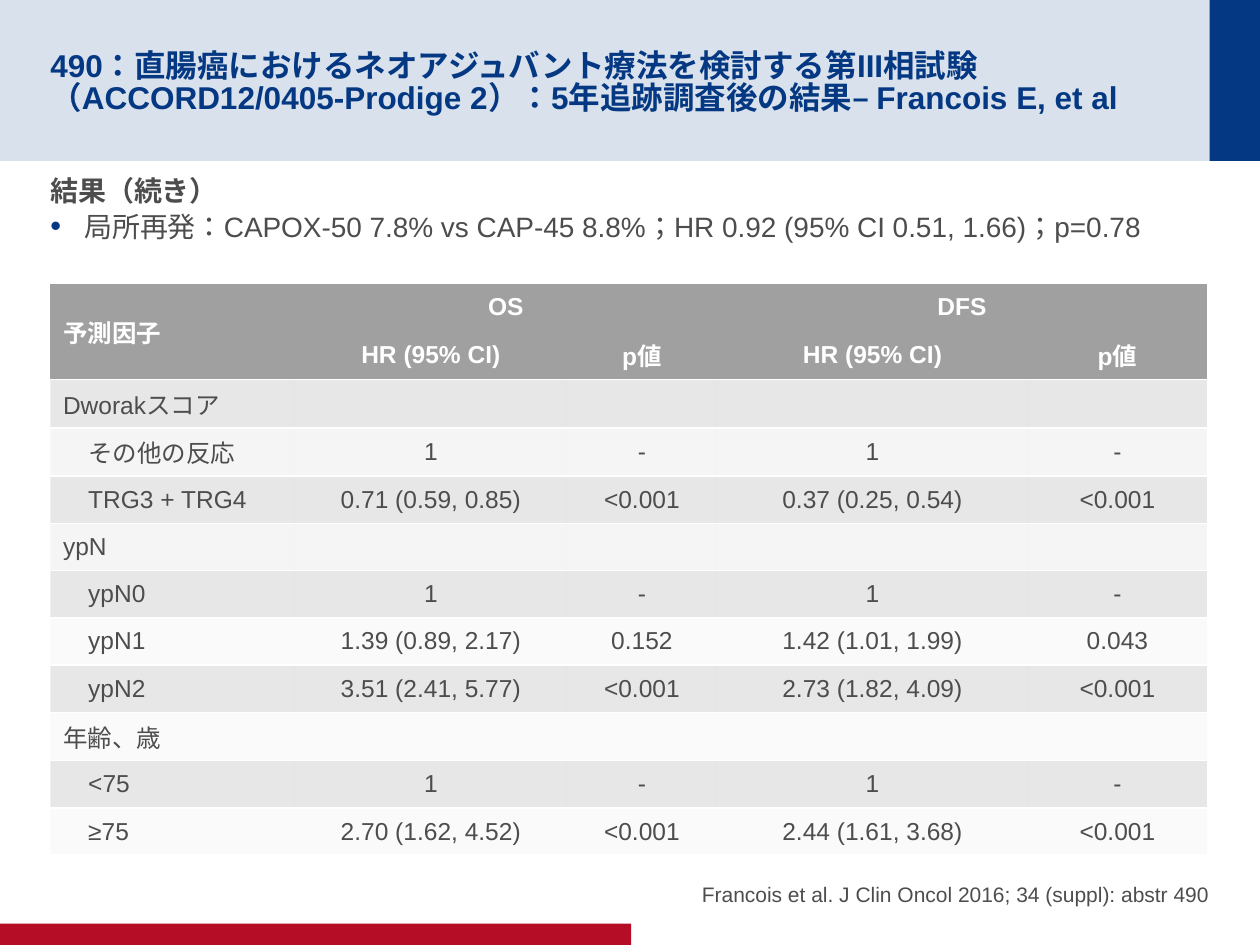
from lxml.etree import SubElement
from pptx import Presentation
from pptx.dml.color import RGBColor
from pptx.enum.lang import MSO_LANGUAGE_ID
from pptx.enum.shapes import MSO_SHAPE
from pptx.enum.text import MSO_ANCHOR, MSO_AUTO_SIZE, PP_ALIGN
from pptx.oxml.ns import qn
from pptx.util import Pt

NAVY = RGBColor(0x04, 0x38, 0x82)
RED = RGBColor(0xB6, 0x0D, 0x27)
INK = RGBColor(0x4D, 0x4D, 0x4D)
GREY = RGBColor(0xA0, 0xA0, 0xA0)
PALE = RGBColor(0xEC, 0xEC, 0xEC)
WHITE = RGBColor(0xFF, 0xFF, 0xFF)

NO_GRID_STYLE = "{2D5ABB26-0587-4C30-8999-92F81FD0307C}"

TITLE = ("490：直腸癌におけるネオアジュバント療法を検討する第III相試験"
         "（ACCORD12/0405-Prodige 2）：5年追跡調査後の結果– Francois E, et al")
HEADING = "結果（続き）"
RECURRENCE = ("局所再発：CAPOX-50 7.8% vs CAP-45 8.8%；"
              "HR 0.92 (95% CI 0.51, 1.66)；p=0.78")
CITATION = "Francois et al. J Clin Oncol 2016; 34 (suppl): abstr 490"

COLUMN_WIDTHS = (139.7, 155.5, 85.7, 177.8, 102.2)
HEADER = [
    ("予測因子", "OS", "", "DFS", ""),
    ("", "HR (95% CI)", "p値", "HR (95% CI)", "p値"),
]
REFERENCE = ("1", "-", "1", "-")
FACTORS = {
    "Dworakスコア": {
        "その他の反応": REFERENCE,
        "TRG3 + TRG4": ("0.71 (0.59, 0.85)", "<0.001", "0.37 (0.25, 0.54)", "<0.001"),
    },
    "ypN": {
        "ypN0": REFERENCE,
        "ypN1": ("1.39 (0.89, 2.17)", "0.152", "1.42 (1.01, 1.99)", "0.043"),
        "ypN2": ("3.51 (2.41, 5.77)", "<0.001", "2.73 (1.82, 4.09)", "<0.001"),
    },
    "年齢、歳": {
        "<75": REFERENCE,
        "≥75": ("2.70 (1.62, 4.52)", "<0.001", "2.44 (1.61, 3.68)", "<0.001"),
    },
}


def set_values(target, values):
    for name, value in values.items():
        setattr(target, name, value)


def set_alpha(fill_parent, percent):
    color = fill_parent.find(".//" + qn("a:srgbClr"))
    SubElement(color, qn("a:alpha"), val=str(percent * 1000))


def write(paragraph, text, size, color, bold=False, **layout):
    run = paragraph.add_run()
    run.text = text
    set_values(run.font, {"name": "Arial", "size": Pt(size), "bold": bold,
                          "language_id": MSO_LANGUAGE_ID.JAPANESE})
    run.font.color.rgb = color
    set_values(paragraph, layout)


def set_frame(frame, anchor, top, bottom):
    set_values(frame, {"word_wrap": True, "auto_size": MSO_AUTO_SIZE.NONE,
                       "vertical_anchor": anchor, "margin_left": 0, "margin_right": 0,
                       "margin_top": Pt(top), "margin_bottom": Pt(bottom)})


def add_bar(slide, left, top, width, height, color):
    bar = slide.shapes.add_shape(MSO_SHAPE.RECTANGLE, Pt(left), Pt(top), Pt(width), Pt(height))
    bar.shadow.inherit = False
    bar.fill.solid()
    bar.fill.fore_color.rgb = color
    bar.line.fill.background()
    return bar


def add_title_band(slide, left, top, width, height):
    band = add_bar(slide, left, top, width, height, NAVY)
    set_alpha(band._element.spPr, 15)
    add_bar(slide, left + width - 28.8, top, 28.8, height, NAVY)

    title = slide.shapes.title
    set_values(title, {"left": Pt(left + 28.8), "top": Pt(top + 14.4),
                       "width": Pt(648.7), "height": Pt(63.4)})
    set_frame(title.text_frame, MSO_ANCHOR.MIDDLE, 3.6, 0)
    write(title.text_frame.paragraphs[0], TITLE, 18, NAVY, True,
          alignment=PP_ALIGN.LEFT, line_spacing=0.85)
    # Bring the title in front of the band
    slide.shapes._spTree.append(title._element)


def add_bullet(paragraph, indent):
    properties = paragraph._p.get_or_add_pPr()
    properties.set("marL", str(Pt(indent)))
    properties.set("indent", str(-Pt(indent)))
    bullet_color = SubElement(properties, qn("a:buClr"))
    SubElement(bullet_color, qn("a:srgbClr"), val=str(NAVY))
    SubElement(properties, qn("a:buSzPct"), val="110000")
    SubElement(properties, qn("a:buFont"), typeface="Arial")
    SubElement(properties, qn("a:buChar"), char="•")


def add_findings(slide, left, top, width, height):
    findings = slide.shapes.add_textbox(Pt(left), Pt(top), Pt(width), Pt(height)).text_frame
    set_frame(findings, MSO_ANCHOR.TOP, 3.6, 3.6)
    spacing = {"space_after": Pt(4), "line_spacing": 0.85}
    write(findings.paragraphs[0], HEADING, 16, INK, True, **spacing)
    recurrence = findings.add_paragraph()
    write(recurrence, RECURRENCE, 16, INK, **spacing)
    add_bullet(recurrence, 19.4)


def add_bottom_border(cell):
    properties = cell._tc.get_or_add_tcPr()
    border = SubElement(properties, qn("a:lnB"), w=str(Pt(1)))
    SubElement(SubElement(border, qn("a:solidFill")), qn("a:srgbClr"), val=str(WHITE))
    properties.insert(0, border)


def fill_cell(cell, text, text_color, bold, alignment, fill_color, alpha):
    cell.vertical_anchor = MSO_ANCHOR.MIDDLE
    cell.fill.solid()
    cell.fill.fore_color.rgb = fill_color
    if alpha < 100:
        set_alpha(cell._tc.tcPr, alpha)
    paragraph = cell.text_frame.paragraphs[0]
    if text:
        write(paragraph, text, 14, text_color, bold, alignment=alignment)
    else:
        SubElement(paragraph._p, qn("a:endParaRPr"), sz="1400")


def row_shade(body_row):
    if body_row % 2 == 0:
        return GREY, 25
    return (GREY, 10) if body_row < 4 else (PALE, 25)


def add_factor_table(slide, left, top, row_height):
    rows = list(HEADER)
    level_rows = set()
    for factor, levels in FACTORS.items():
        rows.append((factor, "", "", "", ""))
        for level, results in levels.items():
            level_rows.add(len(rows))
            rows.append((level, *results))

    table = slide.shapes.add_table(
        len(rows), len(COLUMN_WIDTHS), Pt(left), Pt(top),
        Pt(sum(COLUMN_WIDTHS)), Pt(row_height * len(rows))).table
    set_values(table, {"first_row": False, "horz_banding": False})
    table._tbl.find(".//" + qn("a:tableStyleId")).text = NO_GRID_STYLE
    for column, width in zip(table.columns, COLUMN_WIDTHS):
        column.width = Pt(width)

    for r, texts in enumerate(rows):
        table.rows[r].height = Pt(row_height)
        is_header = r < len(HEADER)
        shade = (GREY, 100) if is_header else row_shade(r - len(HEADER))
        for c, text in enumerate(texts):
            cell = table.cell(r, c)
            fill_cell(cell, text, WHITE if is_header else INK, is_header,
                      PP_ALIGN.CENTER if c else PP_ALIGN.LEFT, *shade)
            if r > 0 or c == 0:
                add_bottom_border(cell)
        if r in level_rows:
            label = table.cell(r, 0).text_frame.paragraphs[0]
            label._p.get_or_add_pPr().set("marL", str(Pt(14.4)))

    # Header spans: factor over two rows, each endpoint over two columns
    for start, end in (((0, 0), (1, 0)), ((0, 1), (0, 2)), ((0, 3), (0, 4))):
        table.cell(*start).merge(table.cell(*end))


def add_citation(slide, left, top, width, height):
    citation = slide.shapes.add_textbox(Pt(left), Pt(top), Pt(width), Pt(height)).text_frame
    set_frame(citation, MSO_ANCHOR.BOTTOM, 0, 0)
    write(citation.paragraphs[0], CITATION, 12, INK,
          alignment=PP_ALIGN.RIGHT, space_after=Pt(4))


def main():
    deck = Presentation()
    set_values(deck, {"slide_width": Pt(720), "slide_height": Pt(540)})
    slide = deck.slides.add_slide(deck.slide_layouts[5])
    add_title_band(slide, 0, 0, 720, 92)
    add_bar(slide, 0, 527.8, 360.7, 12.2, RED)
    add_citation(slide, 365.8, 480.2, 325.4, 38.2)
    add_findings(slide, 28.8, 98.6, 667.4, 373.7)
    add_factor_table(slide, 28.8, 162.2, 27)
    deck.save("out.pptx")


if __name__ == "__main__":
    main()
